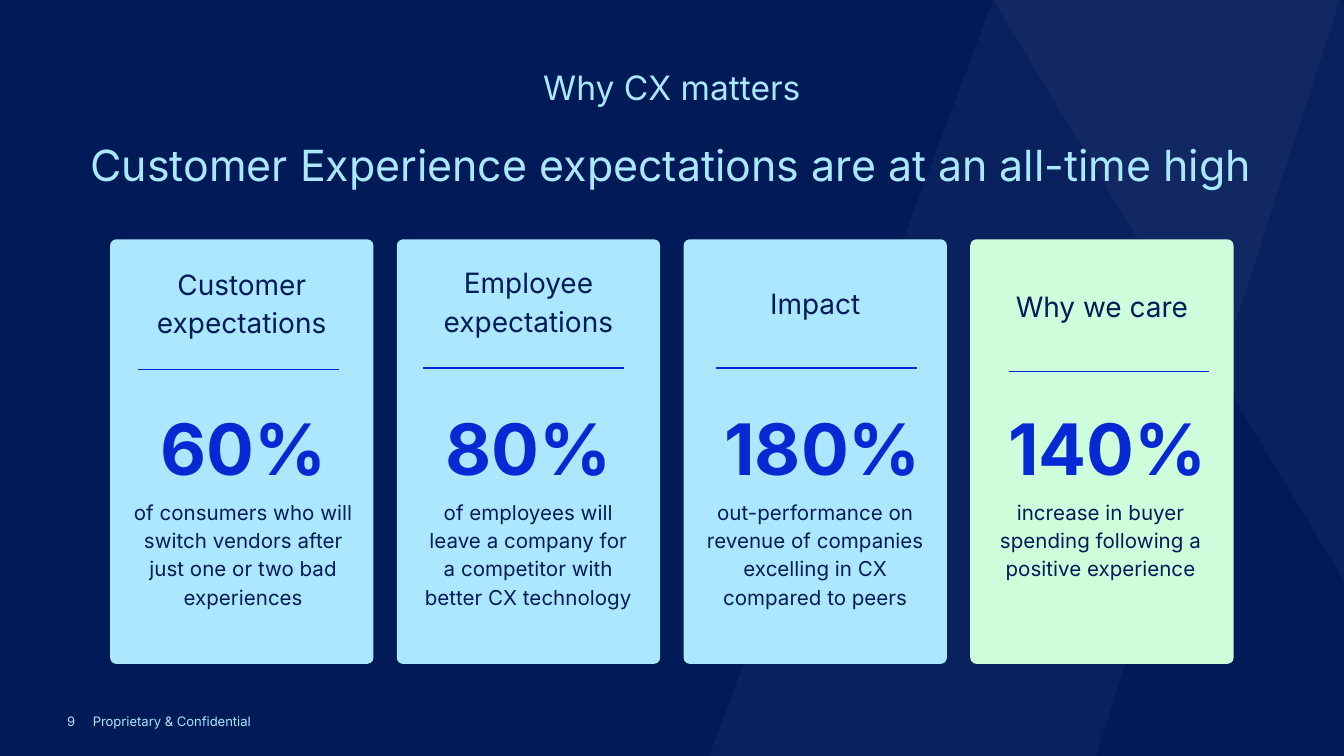
from dataclasses import dataclass

from lxml.etree import SubElement
from pptx import Presentation
from pptx.dml.color import RGBColor
from pptx.enum.shapes import MSO_CONNECTOR as Connector, MSO_SHAPE as Shape
from pptx.enum.text import MSO_ANCHOR as Anchor, PP_ALIGN as Align
from pptx.oxml.ns import qn
from pptx.util import Pt

COLORS = {
    "navy": "011B58",
    "facet": "102761",
    "facet_light": "1A2F68",
    "sky": "ABE7FF",
    "mint": "CDFDDA",
    "blue": "0629D3",
}
FONT = "Inter"
SLIDE_WIDTH, SLIDE_HEIGHT = 720, 405
CARD_LEFT, CARD_TOP, CARD_WIDTH, CARD_HEIGHT = 59, 128.2, 141.1, 227.5
CARD_PITCH = 153.6
RULE_WIDTH = 107.5
NUMBER_TOP, CAPTION_TOP = 203, 258.5


@dataclass
class Card:
    heading: str
    number: str
    caption: str
    heading_top: float
    rule_left: float  # left offsets are measured from the card
    rule_top: float
    number_left: float
    caption_left: float
    caption_width: float
    fill: str = "sky"


CARDS = [
    Card("Customer expectations", "60%",
         "of consumers who will switch vendors after just one or two bad experiences",
         133.2, 15, 198, 0.8, 1.5, 139.7),
    Card("Employee expectations", "80%",
         "of employees will leave a company for a competitor with better CX technology",
         132.5, 14.2, 197.2, 0, 6.3, 128.2),
    Card("Impact", "180%",
         "out-performance on revenue of companies excelling in CX compared to peers",
         143.5, 17.4, 197.2, 4, 1.8, 137.5),
    Card("Why we care", "140%",
         "increase in buyer spending following a positive experience",
         145.4, 20.6, 199, 3, 0, 139.7, "mint"),
]


def color(name: str) -> RGBColor:
    return RGBColor.from_string(COLORS[name])


def add_facet(slide, points: list, fill: str, opacity: int) -> None:
    builder = slide.shapes.build_freeform(*points[0], scale=Pt(1))
    builder.add_line_segments(points[1:], close=True)
    shape = builder.convert_to_shape()
    shape.shadow.inherit = False
    shape.fill.solid()
    shape.fill.fore_color.rgb = color(fill)
    shape.line.fill.background()
    hue = shape.fill._xPr.find(qn("a:solidFill"))[0]
    SubElement(hue, qn("a:alpha"), val=str(opacity * 1000))


def add_text(slide, lines: list, left: float, top: float, width: float,
             height: float, sizes: list, ink: str, inset: float = 7.2,
             align: Align = Align.CENTER, spacing: float = 1.15,
             gap: float = 0, bold: bool = False,
             anchor: Anchor = Anchor.TOP) -> None:
    box = slide.shapes.add_textbox(Pt(left), Pt(top), Pt(width), Pt(height))
    frame = box.text_frame
    frame.word_wrap = True
    frame.vertical_anchor = anchor
    frame.margin_left = frame.margin_right = Pt(inset)
    frame.margin_top = frame.margin_bottom = Pt(inset)
    frame.text = "\n".join(lines)
    for index, (paragraph, size) in enumerate(zip(frame.paragraphs, sizes)):
        paragraph.alignment = align
        paragraph.line_spacing = spacing
        if index:
            paragraph.space_before = Pt(gap)
        font = paragraph.font
        font.name, font.size, font.bold = FONT, Pt(size), bold
        font.color.rgb = color(ink)


def add_rule(slide, left: float, top: float) -> None:
    rule = slide.shapes.add_connector(
        Connector.STRAIGHT, Pt(left), Pt(top), Pt(left + RULE_WIDTH), Pt(top))
    rule.line.color.rgb = color("blue")
    rule.line.width = Pt(0.75)
    SubElement(rule._element.spPr, qn("a:effectLst"))


def add_card(slide, card: Card, left: float) -> None:
    panel = slide.shapes.add_shape(
        Shape.ROUNDED_RECTANGLE, Pt(left), Pt(CARD_TOP), Pt(CARD_WIDTH), Pt(CARD_HEIGHT))
    panel.adjustments[0] = 0.024
    panel.shadow.inherit = False
    panel.fill.solid()
    panel.fill.fore_color.rgb = color(card.fill)
    panel.line.fill.background()
    add_text(slide, [card.heading], left, card.heading_top, CARD_WIDTH, 53, [15], "navy")
    add_rule(slide, left + card.rule_left, card.rule_top)
    add_text(slide, [card.number], left + card.number_left, NUMBER_TOP,
             CARD_WIDTH, 60.5, [38], "blue", bold=True)
    add_text(slide, [card.caption], left + card.caption_left, CAPTION_TOP,
             card.caption_width, 74, [11], "navy")


def main() -> None:
    presentation = Presentation()
    presentation.slide_width, presentation.slide_height = Pt(SLIDE_WIDTH), Pt(SLIDE_HEIGHT)
    slide = presentation.slides.add_slide(presentation.slide_layouts[6])
    slide.background.fill.solid()
    slide.background.fill.fore_color.rgb = color("navy")

    # Background facets, sharing their corners
    top_left, top_right, crossing = (532, 0), (718.5, 0), (653, 200)
    add_facet(slide, [top_right, crossing, (SLIDE_WIDTH, 311), (SLIDE_WIDTH, 3)], "facet", 59)
    add_facet(slide, [top_left, (379.5, SLIDE_HEIGHT), (587, SLIDE_HEIGHT), crossing],
              "facet", 59)
    add_facet(slide, [top_left, crossing, top_right], "facet_light", 66)

    # Title and footer
    add_text(slide, ["Why CX matters",
                     "Customer Experience expectations are at an all-time high"],
             36, 38.2, 648, 68.4, [18, 23], "sky", inset=0, spacing=0.9, gap=19.6)
    for text, left, width, anchor in (
            ("Proprietary & Confidential", 49.7, 190, Anchor.TOP),
            ("9", 36, 13.7, Anchor.MIDDLE)):
        add_text(slide, [text], left, 382.3, width, 8.6, [7], "sky", inset=0,
                 align=Align.LEFT, spacing=1.0, anchor=anchor)

    # Statistic cards
    for index, card in enumerate(CARDS):
        add_card(slide, card, CARD_LEFT + index * CARD_PITCH)

    presentation.save("out.pptx")


if __name__ == "__main__":
    main()
